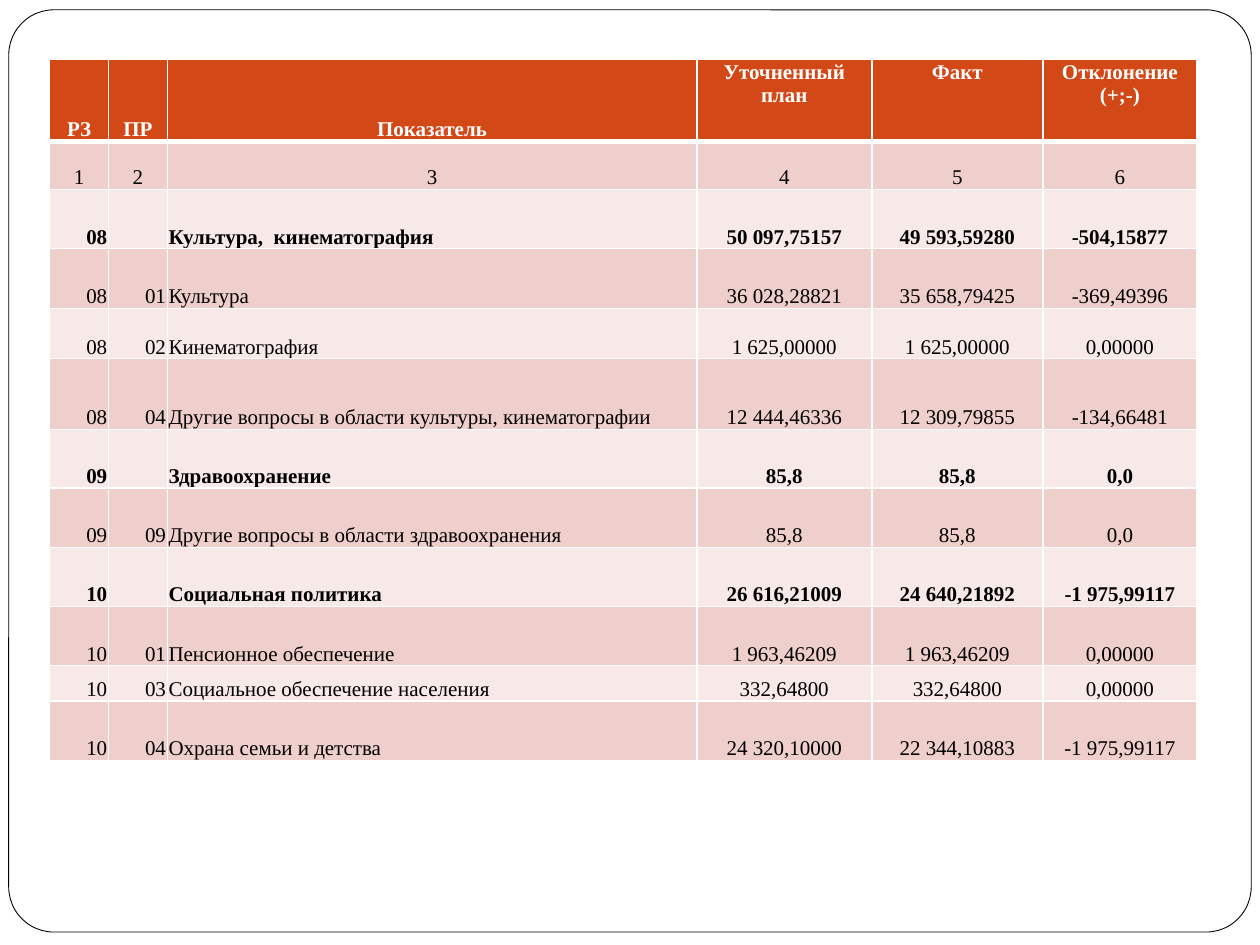
from lxml.etree import SubElement
from pptx import Presentation
from pptx.dml.color import RGBColor
from pptx.enum.shapes import MSO_SHAPE as Shape
from pptx.enum.text import MSO_ANCHOR as Anchor, PP_ALIGN as Align
from pptx.oxml.ns import qn
from pptx.util import Pt

HEADER = ["РЗ", "ПР", "Показатель", "Уточненный план", "Факт", "Отклонение (+;-)"]
NUMBERS = ["1", "2", "3", "4", "5", "6"]
BUDGET = [
    ["08", "", "Культура,  кинематография", "50 097,75157", "49 593,59280", "-504,15877"],
    ["08", "01", "Культура", "36 028,28821", "35 658,79425", "-369,49396"],
    ["08", "02", "Кинематография", "1 625,00000", "1 625,00000", "0,00000"],
    ["08", "04", "Другие вопросы в области культуры, кинематографии",
     "12 444,46336", "12 309,79855", "-134,66481"],
    ["09", "", "Здравоохранение", "85,8", "85,8", "0,0"],
    ["09", "09", "Другие вопросы в области здравоохранения", "85,8", "85,8", "0,0"],
    ["10", "", "Социальная политика", "26 616,21009", "24 640,21892", "-1 975,99117"],
    ["10", "01", "Пенсионное обеспечение", "1 963,46209", "1 963,46209", "0,00000"],
    ["10", "03", "Социальное обеспечение населения", "332,64800", "332,64800", "0,00000"],
    ["10", "04", "Охрана семьи и детства", "24 320,10000", "22 344,10883", "-1 975,99117"],
]
COLUMN_WIDTHS = [33.6, 33.6, 302.6, 100, 97.8, 88]
ROW_HEIGHTS = [46.9, 27.5, 33.8, 34.2, 28.7, 40.5, 33.5, 33.9, 33.8, 33.8, 20.3, 33.8]
BODY_ALIGNMENTS = [Align.RIGHT, Align.RIGHT, Align.LEFT] + [Align.CENTER] * 3


def color(hex_string):
    return RGBColor.from_string(hex_string)


class BudgetSlide:
    font = "Times New Roman"
    size = 12
    white, black = "FFFFFF", "000000"
    header_fill = "D34817"
    bands = ["F7E9E8", "EFCFCC"]

    def __init__(self, presentation):
        self.slide = presentation.slides.add_slide(presentation.slide_layouts[6])

    def frame(self, left, top, width, height, corner):
        shape = self.slide.shapes.add_shape(
            Shape.ROUNDED_RECTANGLE, Pt(left), Pt(top), Pt(width), Pt(height))
        shape.adjustments[0] = corner
        shape.shadow.inherit = False
        shape.fill.solid()
        shape.fill.fore_color.rgb = color(self.white)
        shape.line.color.rgb = color(self.black)
        shape.line.width = Pt(0.5)

    def borders(self, cell, top, bottom):
        properties = cell._tc.get_or_add_tcPr()
        for side, width in (("L", 1), ("R", 1), ("T", top), ("B", bottom)):
            line = SubElement(properties, qn(f"a:ln{side}"), w=str(Pt(width)))
            fill = SubElement(line, qn("a:solidFill"))
            SubElement(fill, qn("a:srgbClr"), val=self.white)

    def cell(self, cell, text, fill, text_color, bold, alignment, anchor):
        cell.text = text
        cell.vertical_anchor = anchor
        cell.margin_left = cell.margin_right = cell.margin_top = Pt(0.75)
        cell.margin_bottom = 0
        cell.fill.solid()
        cell.fill.fore_color.rgb = color(fill)
        paragraph = cell.text_frame.paragraphs[0]
        paragraph.alignment = alignment
        paragraph.font.name = self.font
        paragraph.font.size = Pt(self.size)
        paragraph.font.bold = bold
        paragraph.font.color.rgb = color(text_color)

    def table(self, left, top, rows):
        table = self.slide.shapes.add_table(
            len(rows), len(COLUMN_WIDTHS), Pt(left), Pt(top),
            Pt(sum(COLUMN_WIDTHS)), Pt(sum(ROW_HEIGHTS))).table
        table.first_row = table.horz_banding = False
        for column, width in zip(table.columns, COLUMN_WIDTHS):
            column.width = Pt(width)
        for r, (row, height) in enumerate(zip(rows, ROW_HEIGHTS)):
            table.rows[r].height = Pt(height)
            header = r == 0
            fill = self.header_fill if header else self.bands[r % 2]
            # Section totals have no subsection code
            bold = header or row[1] == ""
            for c, text in enumerate(row):
                cell = table.cell(r, c)
                self.borders(cell, 3 if r == 1 else 1, 3 if header else 1)
                self.cell(cell, text, fill, self.white if header else self.black, bold,
                          Align.CENTER if r < 2 else BODY_ALIGNMENTS[c],
                          Anchor.TOP if header and c > 2 else Anchor.BOTTOM)


def main():
    presentation = Presentation()
    presentation.slide_width, presentation.slide_height = Pt(720), Pt(540)
    budget = BudgetSlide(presentation)
    # Rounded slide border
    budget.frame(5, 5.6, 710, 527, 0.049)
    # Budget execution by section
    budget.table(28.4, 33.9, [HEADER, NUMBERS] + BUDGET)
    presentation.save("out.pptx")


if __name__ == "__main__":
    main()
